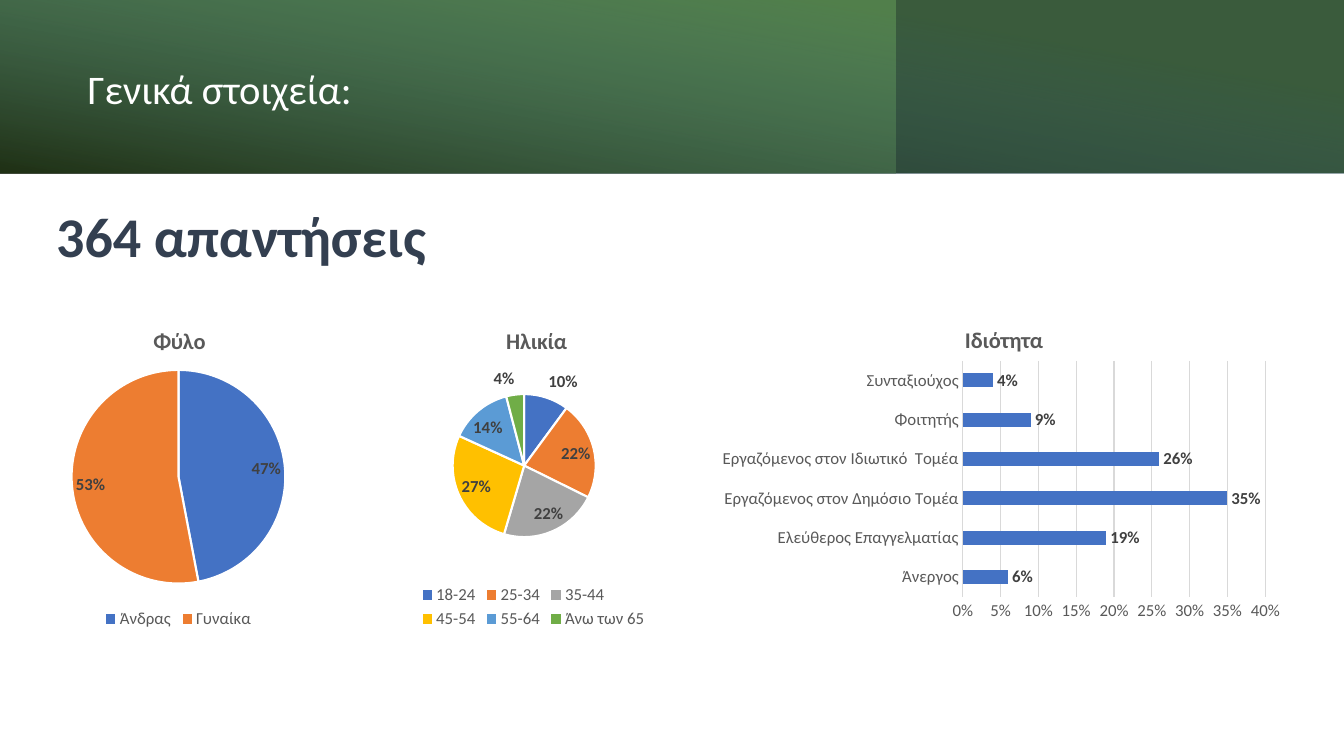
from lxml import etree
from pptx import Presentation
from pptx.chart.data import CategoryChartData
from pptx.dml.color import RGBColor
from pptx.enum.chart import XL_CHART_TYPE, XL_LABEL_POSITION, XL_LEGEND_POSITION, XL_TICK_MARK
from pptx.enum.shapes import MSO_SHAPE
from pptx.enum.text import MSO_ANCHOR, PP_ALIGN
from pptx.oxml import parse_xml
from pptx.oxml.ns import qn
from pptx.util import Inches, Pt

PIE = XL_CHART_TYPE.PIE
BAR = XL_CHART_TYPE.BAR_CLUSTERED
BEST_FIT = XL_LABEL_POSITION.BEST_FIT
OUTSIDE_END = XL_LABEL_POSITION.OUTSIDE_END
LEGEND_BOTTOM = XL_LEGEND_POSITION.BOTTOM
NO_TICK = XL_TICK_MARK.NONE
RECTANGLE = MSO_SHAPE.RECTANGLE
MIDDLE = MSO_ANCHOR.MIDDLE
LEFT = PP_ALIGN.LEFT

FONT = "Calibri"
GRAY = "595959"
GRID = "D9D9D9"
PALETTE = ["4472C4", "ED7D31", "A5A5A5", "FFC000", "5B9BD5", "70AD47"]
DRAWING = "http://schemas.openxmlformats.org/drawingml/2006/main"


def color(value):
    return RGBColor.from_string(value)


def style_font(font, size, value, bold=False):
    font.name = FONT
    font.size = Pt(size)
    font.bold = bold
    font.color.rgb = color(value)


def add_panel(slide, box, fill):
    shape = slide.shapes.add_shape(RECTANGLE, *map(Inches, box))
    shape.shadow.inherit = False
    shape.line.fill.background()
    shape.fill.solid()
    shape.fill.fore_color.rgb = color(fill)
    return shape


def add_shade(slide, box):
    shape = add_panel(slide, box, "000000")
    properties = shape._element.spPr
    properties.find(qn("a:xfrm")).set("flipH", "1")
    stops = "".join(
        f'<a:gs pos="{position * 1000}"><a:srgbClr val="{value}">'
        f'<a:alpha val="{alpha * 1000}"/></a:srgbClr></a:gs>'
        for position, value, alpha in [(0, "000000", 63), (78, "4472C4", 15), (100, "4472C4", 15)]
    )
    gradient = parse_xml(
        f'<a:gradFill xmlns:a="{DRAWING}" rotWithShape="1"><a:gsLst>{stops}</a:gsLst>'
        f'<a:lin ang="{260 * 60000}" scaled="0"/></a:gradFill>'
    )
    properties.replace(properties.find(qn("a:solidFill")), gradient)


def add_header(slide, box):
    left, top, width, height = box
    add_panel(slide, box, "385723")
    add_panel(slide, (left, top, width * 2 / 3, height), "548235")
    add_shade(slide, box)
    title = slide.shapes.title
    title.left, title.top = Inches(left + 0.77), Inches(top + 0.27)
    title.width, title.height = Inches(12.16), Inches(1.27)
    slide.shapes._spTree.append(title._element)
    title.text_frame.text = "Γενικά στοιχεία:"
    title.text_frame.vertical_anchor = MIDDLE
    paragraph = title.text_frame.paragraphs[0]
    paragraph.alignment = LEFT
    paragraph.line_spacing = 0.9
    style_font(paragraph.runs[0].font, 29, "FFFFFF")


def add_response_count(slide, box):
    text_box = slide.shapes.add_textbox(*map(Inches, box))
    text_box.text_frame.word_wrap = True
    text_box.text_frame.text = "364 απαντήσεις"
    style_font(text_box.text_frame.paragraphs[0].runs[0].font, 40, "333F50", True)


def set_layout(element, box, area, inner=False):
    for old in element.findall(qn("c:layout")):
        element.remove(old)
    layout = etree.Element(qn("c:layout"))
    manual = etree.SubElement(layout, qn("c:manualLayout"))
    settings = [("layoutTarget", "inner")] if inner else []
    settings += [("xMode", "edge"), ("yMode", "edge")]
    left, top, width, height = box
    fractions = [(area[0] - left) / width, (area[1] - top) / height]
    fractions += [size / total for size, total in zip(area[2:], (width, height))]
    settings += [(name, f"{value:.4f}") for name, value in zip("xywh", fractions)]
    for name, value in settings:
        etree.SubElement(manual, qn(f"c:{name}")).set("val", value)
    element.insert(1 if element.tag == qn("c:title") else 0, layout)


def add_survey_chart(slide, kind, box, plot_area, title, title_at, answers):
    data = CategoryChartData(number_format="0%")
    data.categories = list(answers)
    data.add_series("Series 1", list(answers.values()))
    chart = slide.shapes.add_chart(kind, *map(Inches, box), data).chart
    style_font(chart.font, 12, GRAY)
    chart.has_title = True
    chart.chart_title.text_frame.text = title
    style_font(chart.chart_title.text_frame.paragraphs[0].runs[0].font, 16, GRAY, True)
    chart.chart_title.include_in_layout = False
    chart_element = chart._chartSpace.chart
    set_layout(chart_element.find(qn("c:title")), box, title_at)
    set_layout(chart_element.plotArea, box, plot_area, inner=True)
    plot = chart.plots[0]
    plot.has_data_labels = True
    labels = plot.data_labels
    labels.show_value = True
    labels.show_percentage = False
    labels.number_format = "0%"
    labels.number_format_is_linked = False
    labels.position = BEST_FIT if kind == PIE else OUTSIDE_END
    style_font(labels.font, 12, "404040", True)
    return chart


def add_pie(slide, box, plot_area, title, title_at, answers):
    chart = add_survey_chart(slide, PIE, box, plot_area, title, title_at, answers)
    chart.has_legend = True
    chart.legend.position = LEGEND_BOTTOM
    chart.legend.include_in_layout = False
    style_font(chart.legend.font, 12, GRAY)
    for index, fill in enumerate(PALETTE[:len(answers)]):
        point = chart.plots[0].series[0].points[index]
        point.format.fill.solid()
        point.format.fill.fore_color.rgb = color(fill)
        point.format.line.color.rgb = color("FFFFFF")
        point.format.line.width = Pt(1.5)


def add_bars(slide, box, plot_area, title, title_at, answers):
    chart = add_survey_chart(slide, BAR, box, plot_area, title, title_at, answers)
    chart.has_legend = False
    plot = chart.plots[0]
    plot.gap_width = 182
    plot.vary_by_categories = False
    plot.series[0].format.fill.solid()
    plot.series[0].format.fill.fore_color.rgb = color(PALETTE[0])
    for axis in (chart.category_axis, chart.value_axis):
        axis.major_tick_mark = axis.minor_tick_mark = NO_TICK
        style_font(axis.tick_labels.font, 12, GRAY)
    values = chart.value_axis
    values.minimum_scale, values.maximum_scale, values.major_unit = 0, 0.4, 0.05
    values.tick_labels.number_format = "0%"
    values.tick_labels.number_format_is_linked = False
    values.format.line.fill.background()
    for line in (values.major_gridlines.format.line, chart.category_axis.format.line):
        line.color.rgb = color(GRID)
        line.width = Pt(0.75)


def main():
    presentation = Presentation()
    presentation.slide_width, presentation.slide_height = Inches(13.33), Inches(7.5)
    slide = presentation.slides.add_slide(presentation.slide_layouts[5])
    add_header(slide, (0, 0, 13.33, 1.72))
    add_response_count(slide, (0.46, 1.95, 4.86, 0.77))
    add_pie(slide, (0.12, 3, 3.3, 3.28), (0.71, 3.67, 2.12, 2.12), "Φύλο", (1.48, 3.19),
            {"Άνδρας": 0.47, "Γυναίκα": 0.53})
    add_pie(slide, (2.91, 3, 4.76, 3.28), (4.49, 3.91, 1.42, 1.42), "Ηλικία", (4.98, 3.19),
            {"18-24": 0.1, "25-34": 0.22, "35-44": 0.22,
             "45-54": 0.27, "55-64": 0.14, "Άνω των 65": 0.04})
    add_bars(slide, (7.03, 3, 5.79, 3.23), (9.55, 3.58, 3, 2.34), "Ιδιότητα", (9.53, 3.18),
             {"Άνεργος": 0.06, "Ελεύθερος Επαγγελματίας": 0.19,
              "Εργαζόμενος στον Δημόσιο Τομέα": 0.35,
              "Εργαζόμενος στον Ιδιωτικό  Τομέα": 0.26,
              "Φοιτητής": 0.09, "Συνταξιούχος": 0.04})
    presentation.save("out.pptx")


if __name__ == "__main__":
    main()
